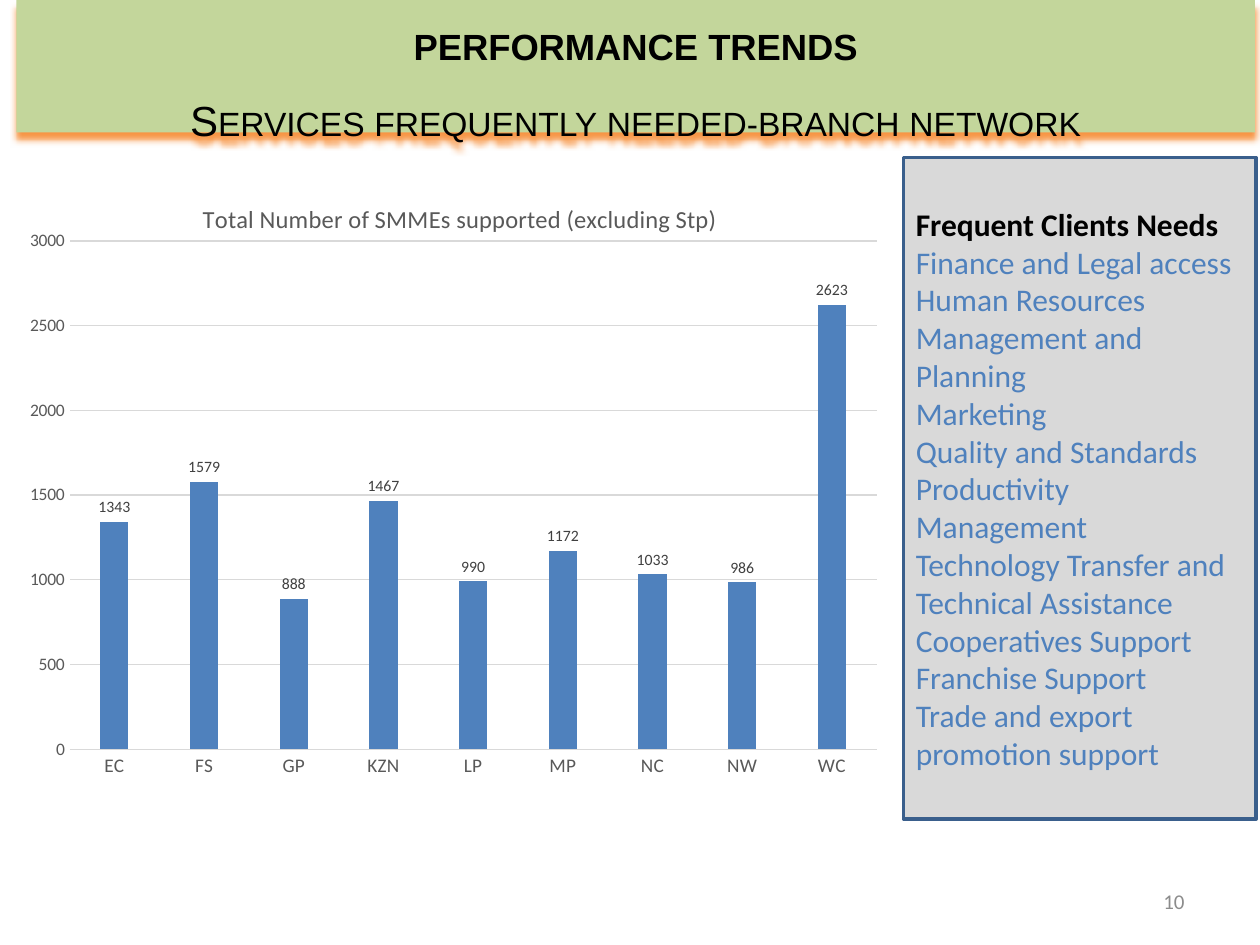
from dataclasses import dataclass

from lxml import etree
from pptx import Presentation
from pptx.chart.data import CategoryChartData
from pptx.dml.color import RGBColor
from pptx.enum.chart import XL_CHART_TYPE as ChartType, XL_LABEL_POSITION as LabelPosition, XL_TICK_MARK as TickMark
from pptx.enum.shapes import MSO_SHAPE as Shape
from pptx.enum.text import MSO_ANCHOR as Anchor, PP_ALIGN as Align
from pptx.oxml import parse_xml
from pptx.oxml.ns import nsdecls, qn
from pptx.util import Inches, Pt

COLORS = {
    "black": "000000", "green": "C3D69B", "orange": "F79646", "blue": "4F81BD",
    "dark_blue": "3A5F8C", "panel": "D9D9D9", "grid": "D9D9D9",
    "axis_text": "595959", "label_text": "404040", "page_number": "8C8C8C",
}
SUPPORTED = {
    "EC": 1343, "FS": 1579, "GP": 888, "KZN": 1467, "LP": 990,
    "MP": 1172, "NC": 1033, "NW": 986, "WC": 2623,
}
NEEDS = [
    "Finance and Legal access", "Human Resources", "Management and Planning",
    "Marketing", "Quality and Standards", "Productivity Management",
    "Technology Transfer and Technical Assistance", "Cooperatives Support",
    "Franchise Support", "Trade and export promotion support",
]


@dataclass(frozen=True)
class Area:
    left: float
    top: float
    width: float
    height: float

    def lengths(self) -> tuple:
        return tuple(Inches(n) for n in (self.left, self.top, self.width, self.height))


def rgb(name: str) -> RGBColor:
    return RGBColor.from_string(COLORS[name])


def style(font, size: float, color: str, bold: bool = False, face: str = "Calibri") -> None:
    font.name, font.size, font.bold = face, Pt(size), bold
    font.color.rgb = rgb(color)


def add_rectangle(slide, area: Area, fill: str):
    box = slide.shapes.add_shape(Shape.RECTANGLE, *area.lengths())
    box.shadow.inherit = False
    box.fill.solid()
    box.fill.fore_color.rgb = rgb(fill)
    box.line.fill.background()
    box.text_frame.word_wrap = True
    box.text_frame.vertical_anchor = Anchor.MIDDLE
    return box


def add_banner(slide, area: Area) -> None:
    box = add_rectangle(slide, area, "green")
    effects = box._element.spPr.find(qn("a:effectLst"))
    effects.append(parse_xml(
        f'<a:outerShdw {nsdecls("a")} blurRad="{Pt(4)}" dist="{Pt(4)}" dir="5400000" rotWithShape="0">'
        f'<a:srgbClr val="{COLORS["orange"]}"/></a:outerShdw>'))
    para = box.text_frame.paragraphs[0]
    para.text = "performance trends\vServices frequently needed-branch network"
    para.alignment, para.line_spacing = Align.CENTER, 1.5
    for span, size, bold in zip(para.runs, (26, 24), (True, False)):
        style(span.font, size, "black", bold, "Arial")
        span.font._element.set("cap", "small")


def add_needs_panel(slide, area: Area) -> None:
    box = add_rectangle(slide, area, "panel")
    box.line.color.rgb, box.line.width = rgb("dark_blue"), Pt(2)
    box.text_frame.text = "\n".join(["Frequent Clients Needs", *NEEDS])
    for index, para in enumerate(box.text_frame.paragraphs):
        para.alignment = Align.LEFT
        heading = index == 0
        style(para.runs[0].font, 18, "black" if heading else "blue", heading)


def add_page_number(slide, area: Area, number: str) -> None:
    box = slide.shapes.add_textbox(*area.lengths())
    box.text_frame.word_wrap = True
    box.text_frame.vertical_anchor = Anchor.MIDDLE
    box.text_frame.text = number
    para = box.text_frame.paragraphs[0]
    para.alignment = Align.RIGHT
    style(para.runs[0].font, 12, "page_number")


def set_plot_layout(chart, area: Area) -> None:
    """Place the inner plot area, given in fractions of the chart."""
    plot_area = chart._chartSpace.chart.plotArea
    layout = plot_area.find(qn("c:layout"))
    if layout is None:
        layout = etree.Element(qn("c:layout"))
        plot_area.insert(0, layout)
    manual = etree.SubElement(layout, qn("c:manualLayout"))
    settings = {"layoutTarget": "inner", "xMode": "edge", "yMode": "edge",
                "x": area.left, "y": area.top, "w": area.width, "h": area.height}
    for tag, value in settings.items():
        etree.SubElement(manual, qn(f"c:{tag}")).set("val", str(value))


def style_axis(axis, size: float) -> None:
    axis.major_tick_mark = axis.minor_tick_mark = TickMark.NONE
    style(axis.tick_labels.font, size, "axis_text")


def add_support_chart(slide, area: Area) -> None:
    data = CategoryChartData()
    data.categories = list(SUPPORTED)
    data.add_series("Series 1", list(SUPPORTED.values()))
    chart = slide.shapes.add_chart(ChartType.COLUMN_CLUSTERED, *area.lengths(), data).chart
    style(chart.font, 10, "black")
    chart.has_legend = False
    chart.has_title = True
    chart.chart_title.text_frame.text = "Total Number of SMMEs supported (excluding Stp)"
    style(chart.chart_title.text_frame.paragraphs[0].runs[0].font, 14, "axis_text")
    chart.chart_title.include_in_layout = False
    set_plot_layout(chart, Area(0.06, 0.1, 0.91, 0.82))

    style_axis(chart.category_axis, 11)
    style_axis(chart.value_axis, 10)
    chart.value_axis.minimum_scale, chart.value_axis.maximum_scale = 0, 3000
    chart.value_axis.major_unit = 500
    chart.value_axis.format.line.fill.background()
    for line in (chart.category_axis.format.line, chart.value_axis.major_gridlines.format.line):
        line.color.rgb, line.width = rgb("grid"), Pt(0.75)

    plot = chart.plots[0]
    plot.gap_width, plot.overlap, plot.vary_by_categories = 219, -27, False
    columns = plot.series[0]
    columns.format.fill.solid()
    columns.format.fill.fore_color.rgb = rgb("blue")
    labels = columns.data_labels
    labels.show_value = True
    labels.position = LabelPosition.OUTSIDE_END
    style(labels.font, 9, "label_text")


def main() -> None:
    deck = Presentation()
    deck.slide_width, deck.slide_height = Inches(10), Inches(7.5)
    slide = deck.slides.add_slide(deck.slide_layouts[6])
    add_banner(slide, Area(0.13, 0, 9.83, 1.05))
    add_page_number(slide, Area(7.17, 6.95, 2.33, 0.4), "10")
    add_support_chart(slide, Area(0.13, 1.42, 7.04, 4.92))
    add_needs_panel(slide, Area(7.17, 1.25, 2.8, 5.25))
    deck.save("out.pptx")


if __name__ == "__main__":
    main()
